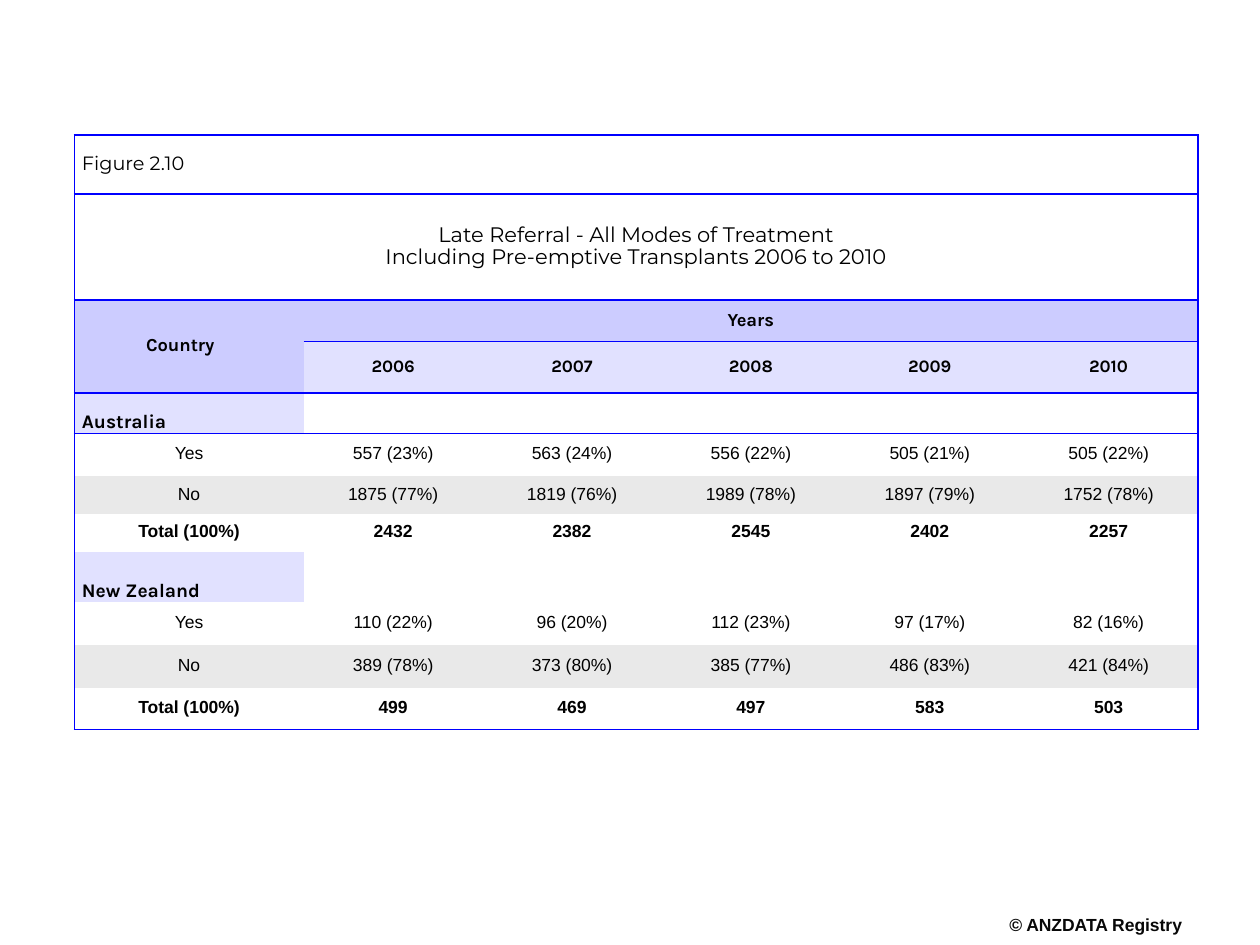
from lxml import etree
from pptx import Presentation
from pptx.dml.color import RGBColor
from pptx.enum.text import MSO_ANCHOR, PP_ALIGN
from pptx.oxml.ns import qn
from pptx.util import Inches, Pt

LEFT, CENTER = PP_ALIGN.LEFT, PP_ALIGN.CENTER
MIDDLE, BOTTOM = MSO_ANCHOR.MIDDLE, MSO_ANCHOR.BOTTOM
BLACK = RGBColor(0x00, 0x00, 0x00)
INK = RGBColor(0x08, 0x08, 0x08)
BLUE = RGBColor(0x00, 0x00, 0xFF)
HEADER = RGBColor(0xCC, 0xCC, 0xFF)
SUBHEADER = RGBColor(0xE1, 0xE1, 0xFF)
BAND = RGBColor(0xE9, 0xE9, 0xE9)
NO_STYLE = "{2D5ABB26-0587-4C30-8999-92F81FD0307C}"

COLUMN_WIDTHS = [1.82] + [1.42] * 5
ROW_HEIGHTS = [0.47, 0.84, 0.33, 0.41, 0.32, 0.34, 0.3, 0.3, 0.4, 0.34, 0.34, 0.33]
RULED_ROWS = {0, 1, 2, 3, 4, 12}
COUNTRIES = {
    "Australia": [
        ["Yes", "557 (23%)", "563 (24%)", "556 (22%)", "505 (21%)", "505 (22%)"],
        ["No", "1875 (77%)", "1819 (76%)", "1989 (78%)", "1897 (79%)", "1752 (78%)"],
        ["Total (100%)", "2432", "2382", "2545", "2402", "2257"],
    ],
    "New Zealand": [
        ["Yes", "110 (22%)", "96 (20%)", "112 (23%)", "97 (17%)", "82 (16%)"],
        ["No", "389 (78%)", "373 (80%)", "385 (77%)", "486 (83%)", "421 (84%)"],
        ["Total (100%)", "499", "469", "497", "583", "503"],
    ],
}


def write(frame, text, size, font, bold=False, align=CENTER, color=BLACK, after=0):
    frame.text = text
    for paragraph in frame.paragraphs:
        paragraph.alignment = align
        paragraph.line_spacing = 0.85
        paragraph.space_before = Pt(0)
        paragraph.space_after = Pt(after)
        paragraph.font.size = Pt(size)
        paragraph.font.name = font
        paragraph.font.bold = bold
        paragraph.font.color.rgb = color


def paint(cell, color):
    cell.fill.solid()
    cell.fill.fore_color.rgb = color


presentation = Presentation()
presentation.slide_width = Inches(10)
presentation.slide_height = Inches(7.5)
slide = presentation.slides.add_slide(presentation.slide_layouts[6])

copyright_box = slide.shapes.add_textbox(Inches(7.99), Inches(7.28), Inches(1.41), Inches(0.17))
copyright_frame = copyright_box.text_frame
copyright_frame.margin_left = copyright_frame.margin_right = 0
copyright_frame.margin_top = copyright_frame.margin_bottom = 0
copyright_frame.word_wrap = False
write(copyright_frame, "© ANZDATA Registry", 10, "Arial", True, color=INK)

table = slide.shapes.add_table(
    len(ROW_HEIGHTS), len(COLUMN_WIDTHS), Inches(0.59), Inches(1.07),
    Inches(sum(COLUMN_WIDTHS)), Inches(sum(ROW_HEIGHTS))).table
table.first_row = table.horz_banding = False
table._tbl.tblPr.find(qn("a:tableStyleId")).text = NO_STYLE
for column, width in zip(table.columns, COLUMN_WIDTHS):
    column.width = Inches(width)
for row, height in zip(table.rows, ROW_HEIGHTS):
    row.height = Inches(height)

table.cell(0, 0).merge(table.cell(0, 5))
table.cell(1, 0).merge(table.cell(1, 5))
table.cell(2, 0).merge(table.cell(3, 0))
table.cell(2, 1).merge(table.cell(2, 5))

for row_index in range(len(ROW_HEIGHTS)):
    for column_index in range(len(COLUMN_WIDTHS)):
        cell = table.cell(row_index, column_index)
        if cell.is_spanned:
            continue
        cell.vertical_anchor = MIDDLE
        cell.margin_left = cell.margin_right = Inches(0.02)
        cell.margin_top = cell.margin_bottom = Inches(0.01)
        row_end = row_index + (cell.span_height if cell.is_merge_origin else 1)
        column_end = column_index + (cell.span_width if cell.is_merge_origin else 1)
        borders = {
            "a:lnL": column_index == 0,
            "a:lnR": column_end == len(COLUMN_WIDTHS),
            "a:lnT": row_index in RULED_ROWS,
            "a:lnB": row_end in RULED_ROWS,
        }
        properties = cell._tc.get_or_add_tcPr()
        for tag, visible in borders.items():
            if visible:
                line = etree.SubElement(properties, qn(tag), w=str(Pt(1)))
                fill = etree.SubElement(line, qn("a:solidFill"))
                etree.SubElement(fill, qn("a:srgbClr"), val=str(BLUE))

figure_cell = table.cell(0, 0)
figure_cell.margin_left = Inches(0.06)
write(figure_cell.text_frame, "Figure 2.10", 11, "Montserrat", align=LEFT)
write(table.cell(1, 0).text_frame,
      "Late Referral - All Modes of Treatment\nIncluding Pre-emptive Transplants 2006 to 2010",
      12, "Montserrat")

country_header = table.cell(2, 0)
country_header.margin_right = Inches(0.16)
for cell, text in ((country_header, "Country"), (table.cell(2, 1), "Years")):
    write(cell.text_frame, text, 10.5, "Karla", True)
    paint(cell, HEADER)
for column_index in range(1, 6):
    cell = table.cell(3, column_index)
    write(cell.text_frame, str(2005 + column_index), 10, "Karla", True)
    paint(cell, SUBHEADER)

for country_index, (country, records) in enumerate(COUNTRIES.items()):
    first_row = 4 + 4 * country_index
    country_cell = table.cell(first_row, 0)
    country_cell.vertical_anchor = BOTTOM
    country_cell.margin_left = Inches(0.06)
    write(country_cell.text_frame, country, 11, "Karla", True, LEFT)
    paint(country_cell, SUBHEADER)
    for row_index, record in enumerate(records, first_row + 1):
        for column_index, text in enumerate(record):
            cell = table.cell(row_index, column_index)
            write(cell.text_frame, text, 10, "Arial", record[0].startswith("Total"), after=14)
            if record[0] == "No":
                paint(cell, BAND)

presentation.save("out.pptx")
